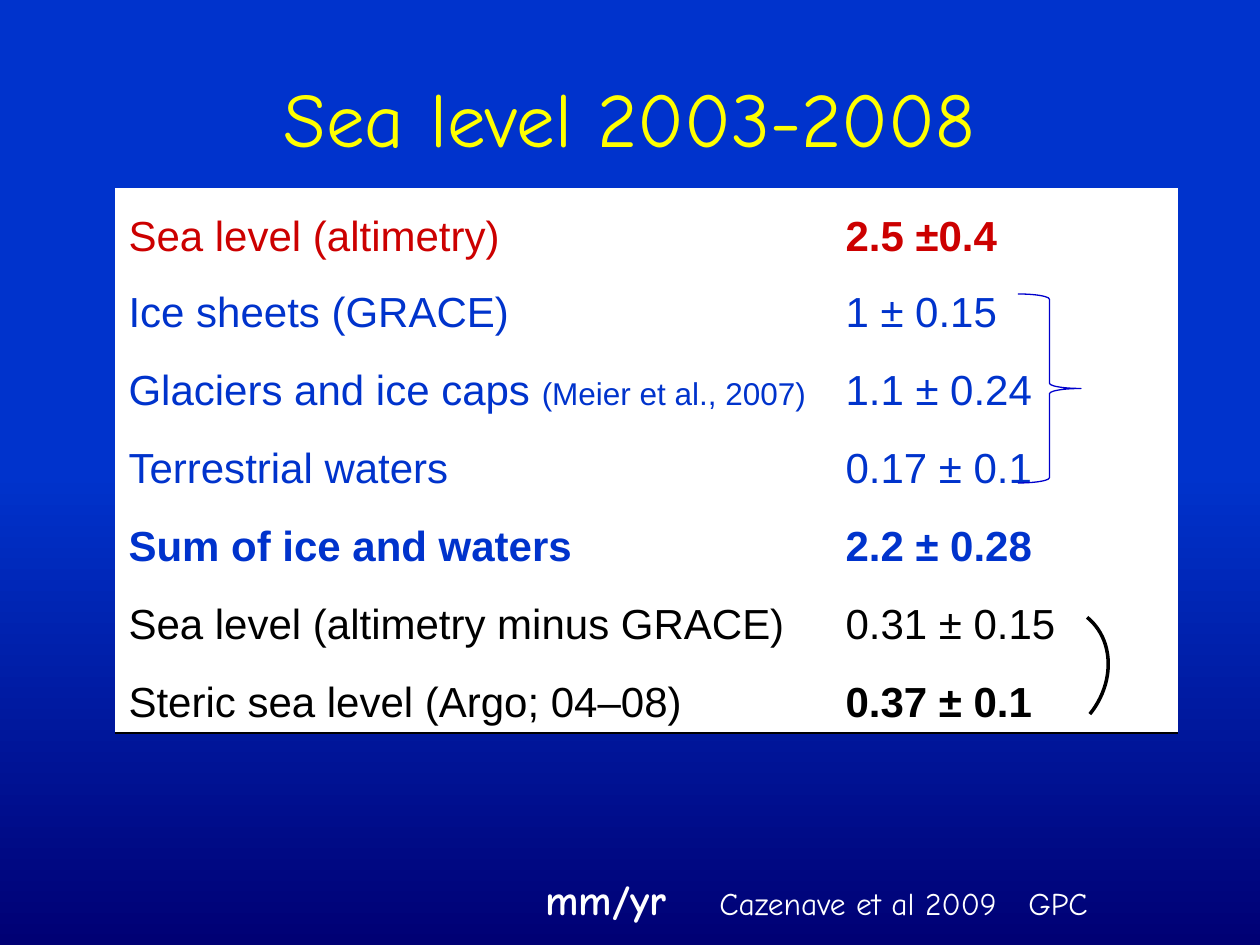
from dataclasses import dataclass

from lxml.etree import SubElement
from pptx import Presentation
from pptx.dml.color import RGBColor
from pptx.enum.shapes import MSO_SHAPE
from pptx.enum.text import MSO_ANCHOR, PP_ALIGN
from pptx.oxml.ns import qn
from pptx.util import Pt

PX = 914400 // 126  # EMU in one px

WHITE = RGBColor(0xFF, 0xFF, 0xFF)
BLACK = RGBColor(0x00, 0x00, 0x00)
YELLOW = RGBColor(0xFF, 0xFF, 0x00)
RED = RGBColor(0xCC, 0x00, 0x00)
BLUE = RGBColor(0x00, 0x33, 0xCC)
NAVY = RGBColor(0x00, 0x00, 0x74)
BRACE_BLUE = RGBColor(0x00, 0x00, 0xCC)

HEAD_FONT = "Comic Neue"
BODY_FONT = "Arial"


@dataclass
class Row:
    label: str
    value: str
    color: RGBColor
    bold_label: bool = False
    bold_value: bool = False
    source: str = ""
    height: int = 78


@dataclass
class Mark:
    kind: MSO_SHAPE
    box: tuple[int, int, int, int]
    color: RGBColor
    weight: float
    rotation: int = 0


ROWS = [
    Row("Sea level (altimetry)", "2.5 ±0.4", RED, bold_value=True),
    Row("Ice sheets (GRACE)", "1 ± 0.15", BLUE, height=76),
    Row("Glaciers and ice caps ", "1.1 ± 0.24", BLUE, source="(Meier et al., 2007)"),
    Row("Terrestrial waters", "0.17 ± 0.1", BLUE),
    Row("Sum of ice and waters", "2.2 ± 0.28", BLUE, bold_label=True, bold_value=True),
    Row("Sea level (altimetry minus GRACE)", "0.31 ± 0.15", BLACK),
    Row("Steric sea level (Argo; 04–08)", "0.37 ± 0.1", BLACK, bold_value=True),
]
COLUMNS = (717, 344)

MARKS = [
    Mark(MSO_SHAPE.RIGHT_BRACE, (1018, 294, 63, 189), BRACE_BLUE, 0.75),
    Mark(MSO_SHAPE.ARC, (978, 601, 126, 147), BLACK, 2, rotation=39),
]


def add_run(p, text: str, *, size: int, color: RGBColor,
            font: str = BODY_FONT, bold: bool = False):
    r = p.add_run()
    r.text = text
    r.font.size, r.font.name, r.font.bold = Pt(size), font, bold
    r.font.color.rgb = color
    return r


def add_text_box(s, x: int, y: int, w: int, h: int):
    tf = s.shapes.add_textbox(x * PX, y * PX, w * PX, h * PX).text_frame
    tf.word_wrap = True
    return tf


def add_text_shadow(r) -> None:
    effects = SubElement(r.font._element, qn("a:effectLst"))
    r.font._element.find(qn("a:solidFill")).addnext(effects)
    shadow = SubElement(effects, qn("a:outerShdw"), blurRad="38100",
                        dist="38100", dir="2700000", algn="tl")
    SubElement(shadow, qn("a:srgbClr"), val="000000")


def set_tabs(p, *stops: int) -> None:
    tabs = SubElement(p._p.get_or_add_pPr(), qn("a:tabLst"))
    for stop in stops:
        SubElement(tabs, qn("a:tab"), pos=str(stop * PX), algn="l")


def add_bottom_border(cell) -> None:
    props = cell._tc.get_or_add_tcPr()
    line = SubElement(props, qn("a:lnB"), w=str(Pt(1)))
    props.insert(0, line)
    fill = SubElement(line, qn("a:solidFill"))
    SubElement(fill, qn("a:srgbClr"), val="000000")


def start_cell(cell):
    cell.fill.solid()
    cell.fill.fore_color.rgb = WHITE
    cell.vertical_anchor = MSO_ANCHOR.BOTTOM
    p = cell.text_frame.paragraphs[0]
    props = p._p.get_or_add_pPr()
    props.set("marL", "342900")
    props.set("indent", "-342900")
    return p


def add_budget_table(s, x: int, y: int) -> None:
    height = sum(row.height for row in ROWS)
    table = s.shapes.add_table(len(ROWS), len(COLUMNS), x * PX, y * PX,
                               sum(COLUMNS) * PX, height * PX).table
    table.first_row = table.horz_banding = False
    for column, width in zip(table.columns, COLUMNS):
        column.width = width * PX
    for i, row in enumerate(ROWS):
        table.rows[i].height = row.height * PX
        p = start_cell(table.cell(i, 0))
        add_run(p, row.label, size=24, color=row.color, bold=row.bold_label)
        if row.source:
            add_run(p, row.source, size=18, color=row.color)
        p = start_cell(table.cell(i, 1))
        add_run(p, row.value, size=24, color=row.color, bold=row.bold_value)
    for column in range(len(COLUMNS)):
        add_bottom_border(table.cell(len(ROWS) - 1, column))


def add_mark(s, mark: Mark) -> None:
    sp = s.shapes.add_shape(mark.kind, *(v * PX for v in mark.box))
    sp.shadow.inherit = False
    sp.fill.background()
    sp.line.color.rgb = mark.color
    sp.line.width = Pt(mark.weight)
    sp.rotation = mark.rotation


def main() -> None:
    prs = Presentation()
    prs.slide_width, prs.slide_height = 1260 * PX, 945 * PX
    s = prs.slides.add_slide(prs.slide_layouts[6])

    # Background: blue down to navy
    fill = s.background.fill
    fill.gradient()
    fill.gradient_angle = 270
    for stop, position, color in zip(fill.gradient_stops, (0.5, 1), (BLUE, NAVY)):
        stop.position = position
        stop.color.rgb = color

    # Title
    tf = add_text_box(s, 63, 38, 1134, 158)
    tf.vertical_anchor = MSO_ANCHOR.MIDDLE
    p = tf.paragraphs[0]
    p.alignment = PP_ALIGN.CENTER
    add_text_shadow(add_run(p, "Sea level 2003-2008", size=44, color=YELLOW,
                            font=HEAD_FONT))

    # Sea level budget
    add_budget_table(s, 116, 189)

    # Unit and citation
    p = add_text_box(s, 533, 867, 596, 63).paragraphs[0]
    set_tabs(p, 174, 483)
    add_run(p, "mm/yr", size=24, color=WHITE, font=HEAD_FONT, bold=True)
    add_run(p, "\tCazenave et al 2009\tGPC", size=18, color=WHITE, font=HEAD_FONT)

    # Brace and arc that group the values
    for mark in MARKS:
        add_mark(s, mark)

    prs.save("out.pptx")


if __name__ == "__main__":
    main()
